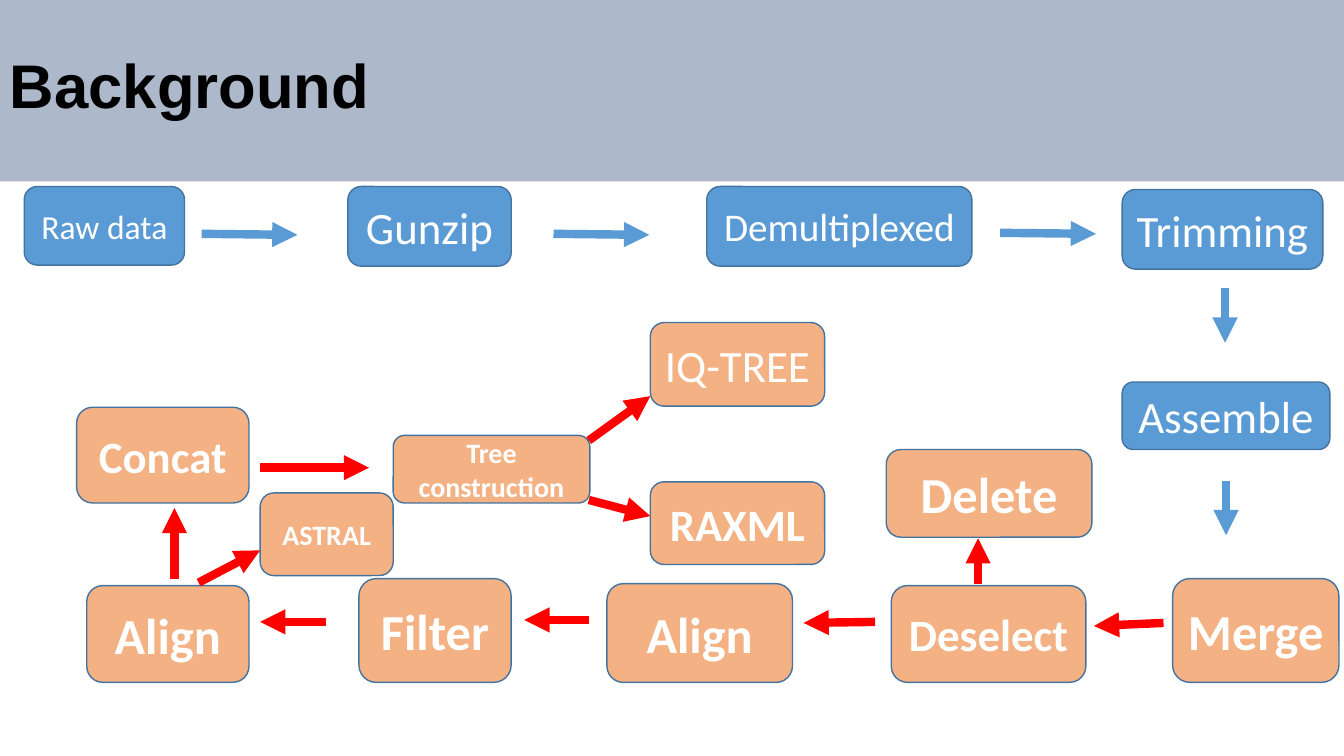
from pptx import Presentation
from pptx.dml.color import RGBColor
from pptx.enum.shapes import MSO_CONNECTOR, MSO_SHAPE
from pptx.enum.text import MSO_ANCHOR, PP_ALIGN
from pptx.oxml.ns import qn
from pptx.util import Inches, Pt
from lxml.etree import SubElement

THEME = {
    "band": "ADB9CA", "title": "000000", "text": "FFFFFF",
    "prep": "5B9BD5", "tree": "F4B183", "outline": "43739E", "flow": "FF0000",
    "title_font": "Arial", "font": "Calibri",
    "title_size": 44, "xl": 36, "l": 32, "m": 28, "s": 24, "xs": 20,
    "arrow_width": 6, "outline_width": 1,
}

TITLE = ("Background", (0, -0.05, 13.33, 1.85))

PREP_STEPS = [
    ("Raw data", (0.24, 1.85, 1.59, 0.78), "s", False),
    ("Gunzip", (3.45, 1.85, 1.62, 0.79), "l", False),
    ("Demultiplexed", (7.01, 1.85, 2.63, 0.79), "m", False),
    ("Trimming", (11.13, 1.88, 1.99, 0.79), "l", False),
    ("Assemble", (11.13, 3.79, 2.06, 0.67), "l", False),
]

TREE_STEPS = [
    ("Merge", (11.63, 5.74, 1.65, 1.03), "xl", True),
    ("Deselect", (8.84, 5.81, 1.93, 0.96), "l", True),
    ("Delete", (8.79, 4.46, 2.04, 0.87), "xl", True),
    ("Align", (6.02, 5.79, 1.84, 0.98), "xl", True),
    ("Filter", (3.56, 5.74, 1.51, 1.03), "xl", True),
    ("Align", (0.86, 5.81, 1.61, 0.96), "xl", True),
    ("Concat", (0.76, 4.04, 1.71, 0.95), "l", True),
    ("ASTRAL", (2.58, 4.89, 1.32, 0.82), "xs", True),
    ("Tree construction", (3.9, 4.32, 1.95, 0.67), "xs", True),
    ("IQ-TREE", (6.45, 3.2, 1.73, 0.83), "l", False),
    ("RAXML", (6.45, 4.78, 1.73, 0.82), "l", True),
]

PREP_ARROWS = [
    (2, 2.32, 2.95, 2.33),
    (5.49, 2.32, 6.44, 2.33),
    (9.92, 2.31, 10.87, 2.32),
    (12.15, 2.86, 12.15, 3.4),
    (12.16, 4.77, 12.16, 5.31),
]

TREE_ARROWS = [
    (11.54, 6.18, 10.85, 6.21),
    (9.7, 5.79, 9.7, 5.34),
    (8.68, 6.17, 7.97, 6.18),
    (5.84, 6.15, 5.2, 6.15),
    (3.23, 6.17, 2.58, 6.17),
    (1.73, 5.74, 1.73, 5.04),
    (1.97, 5.78, 2.58, 5.46),
    (2.58, 4.64, 3.66, 4.64),
    (5.84, 4.37, 6.45, 3.93),
    (5.84, 4.96, 6.45, 5.12),
]


def color(name):
    return RGBColor.from_string(THEME[name])


def add_box(slide, kind, text, box, fill, font, size, ink, bold, align):
    sp = slide.shapes.add_shape(kind, *map(Inches, box))
    sp.shadow.inherit = False
    sp.fill.solid()
    sp.fill.fore_color.rgb = color(fill)
    tf = sp.text_frame
    tf.word_wrap = True
    tf.vertical_anchor = MSO_ANCHOR.MIDDLE
    tf.text = text
    p = tf.paragraphs[0]
    p.alignment = align
    r = p.runs[0]
    r.font.name = THEME[font]
    r.font.size = Pt(THEME[size])
    r.font.bold = bold
    r.font.color.rgb = color(ink)
    return sp


def add_step(slide, text, box, size, bold, fill):
    sp = add_box(slide, MSO_SHAPE.ROUNDED_RECTANGLE, text, box, fill,
                 "font", size, "text", bold, PP_ALIGN.CENTER)
    sp.line.color.rgb = color("outline")
    sp.line.width = Pt(THEME["outline_width"])


def add_arrow(slide, ends, ink):
    cx = slide.shapes.add_connector(MSO_CONNECTOR.STRAIGHT, *map(Inches, ends))
    cx.line.color.rgb = color(ink)
    cx.line.width = Pt(THEME["arrow_width"])
    SubElement(cx.line._get_or_add_ln(), qn("a:tailEnd"), type="triangle")
    SubElement(cx._element.spPr, qn("a:effectLst"))


def main():
    prs = Presentation()
    prs.slide_width = Inches(13.33)
    prs.slide_height = Inches(7.5)
    slide = prs.slides.add_slide(prs.slide_layouts[6])

    text, box = TITLE
    band = add_box(slide, MSO_SHAPE.RECTANGLE, text, box, "band",
                   "title_font", "title_size", "title", True, PP_ALIGN.LEFT)
    band.line.fill.background()
    band.text_frame.paragraphs[0].line_spacing = 0.9

    for steps, arrows, fill, ink in (
        (PREP_STEPS, PREP_ARROWS, "prep", "prep"),
        (TREE_STEPS, TREE_ARROWS, "tree", "flow"),
    ):
        for step in steps:
            add_step(slide, *step, fill)
        for ends in arrows:
            add_arrow(slide, ends, ink)

    prs.save("out.pptx")


if __name__ == "__main__":
    main()
